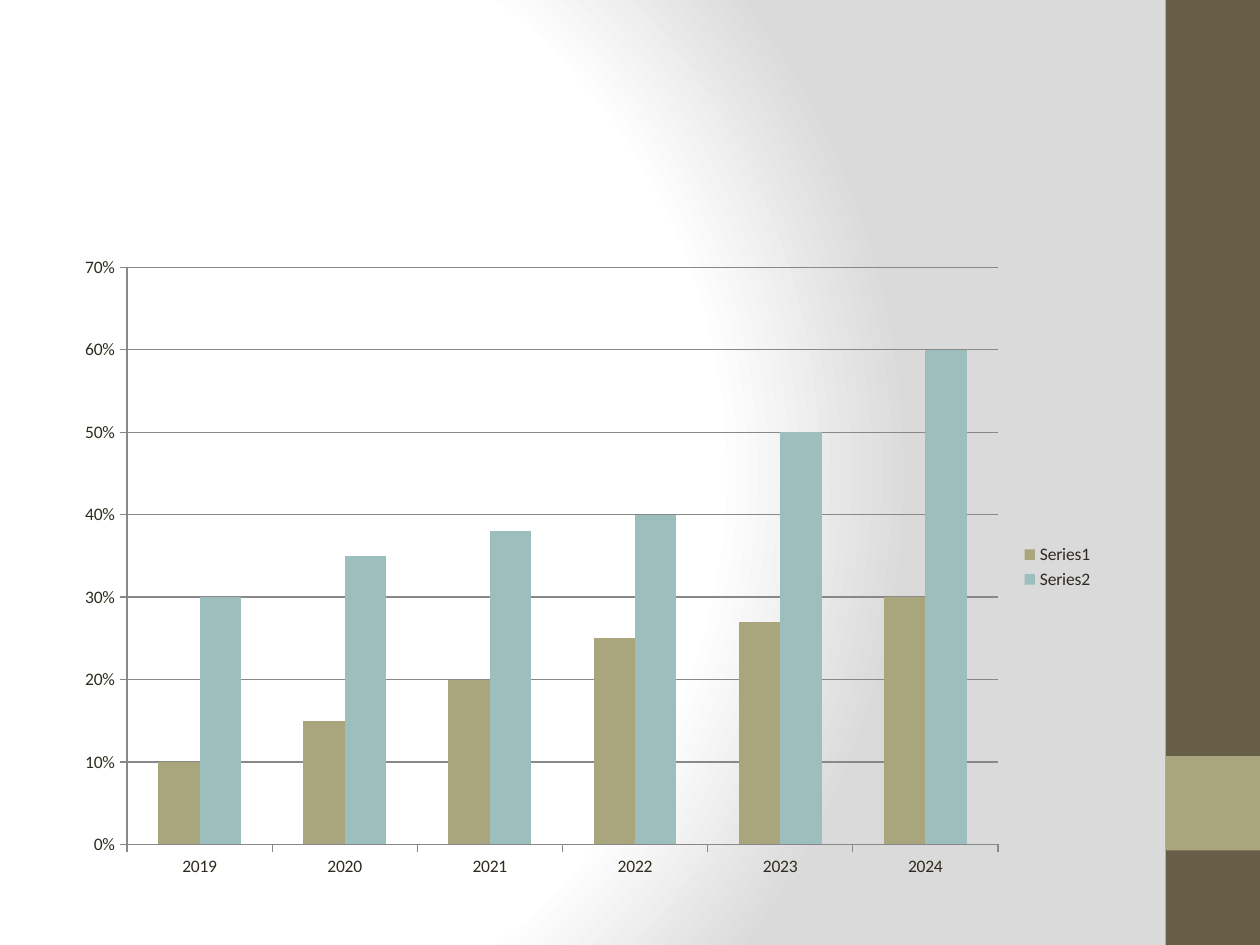
from dataclasses import dataclass

from lxml import etree
from pptx import Presentation
from pptx.chart.data import CategoryChartData
from pptx.dml.color import RGBColor
from pptx.enum.chart import XL_CHART_TYPE, XL_LEGEND_POSITION, XL_TICK_MARK
from pptx.enum.shapes import MSO_SHAPE
from pptx.oxml.ns import qn
from pptx.util import Inches, Pt

RECTANGLE = MSO_SHAPE.RECTANGLE
CLUSTERED = XL_CHART_TYPE.COLUMN_CLUSTERED
LEGEND_RIGHT = XL_LEGEND_POSITION.RIGHT
TICK_OUTSIDE, TICK_NONE = XL_TICK_MARK.OUTSIDE, XL_TICK_MARK.NONE


@dataclass(frozen=True)
class Theme:
    font: str = "Calibri"
    size: int = 10
    text: str = "2F2B20"
    brown: str = "675E47"
    olive: str = "A9A57C"
    teal: str = "9CBEBD"
    axis: str = "888888"
    white: str = "FFFFFF"
    grey: str = "DADADA"


THEME = Theme()

YEARS = ["2019", "2020", "2021", "2022", "2023", "2024"]
SERIES = [
    ("Series1", (0.10, 0.15, 0.20, 0.25, 0.27, 0.30), THEME.olive),
    ("Series2", (0.30, 0.35, 0.38, 0.40, 0.50, 0.60), THEME.teal),
]
CHART_AREA = (0.51, 1.94, 8.27, 5.12)
SIDE_BANDS = [
    ((9.25, 0, 0.75, 7.5), THEME.brown),
    ((9.25, 6, 0.75, 0.75), THEME.olive),
]
GLOW_STOPS = [(0, THEME.white), (75, THEME.white), (100, THEME.grey)]
GLOW_CENTRE = {"l": 20, "t": 50, "r": 100, "b": 50}


def rgb(value):
    return RGBColor.from_string(value)


def thousandths(percent):
    return str(percent * 1000)


def paint_background(page):
    """Fill the page with a circular gradient, which needs direct XML."""
    page.background.fill.gradient()
    gradient = next(page.element.iter(qn("a:gradFill")))
    for child in list(gradient):
        gradient.remove(child)
    stops = etree.SubElement(gradient, qn("a:gsLst"))
    for position, colour in GLOW_STOPS:
        stop = etree.SubElement(stops, qn("a:gs"), pos=thousandths(position))
        etree.SubElement(stop, qn("a:srgbClr"), val=colour)
    circle = etree.SubElement(gradient, qn("a:path"), {"path": "circle"})
    edges = {side: thousandths(part) for side, part in GLOW_CENTRE.items()}
    etree.SubElement(circle, qn("a:fillToRect"), edges)


def add_band(page, area, colour):
    band = page.shapes.add_shape(RECTANGLE, *map(Inches, area))
    band.shadow.inherit = False
    band.fill.solid()
    band.fill.fore_color.rgb = rgb(colour)
    band.line.fill.background()


def style_line(line):
    line.color.rgb = rgb(THEME.axis)
    line.width = Pt(0.75)


def add_growth_chart(page):
    data = CategoryChartData(number_format="0%")
    data.categories = YEARS
    for name, values, _ in SERIES:
        data.add_series(name, values)
    chart = page.shapes.add_chart(CLUSTERED, *map(Inches, CHART_AREA), data).chart

    chart.has_title = False
    chart.font.name = THEME.font
    chart.font.size = Pt(THEME.size)
    chart.font.color.rgb = rgb(THEME.text)
    chart.has_legend = True
    chart.legend.position = LEGEND_RIGHT
    chart.legend.include_in_layout = False

    plot = chart.plots[0]
    plot.vary_by_categories = False
    plot.gap_width = 150
    plot.overlap = 0
    for series, (_, _, colour) in zip(plot.series, SERIES):
        series.format.fill.solid()
        series.format.fill.fore_color.rgb = rgb(colour)

    for axis in (chart.category_axis, chart.value_axis):
        axis.major_tick_mark = TICK_OUTSIDE
        axis.minor_tick_mark = TICK_NONE
        style_line(axis.format.line)
    chart.category_axis.has_major_gridlines = False
    values = chart.value_axis
    values.has_major_gridlines = True
    style_line(values.major_gridlines.format.line)
    values.minimum_scale, values.maximum_scale, values.major_unit = 0, 0.7, 0.1
    values.tick_labels.number_format = "0%"
    values.tick_labels.number_format_is_linked = False


def main():
    deck = Presentation()
    deck.slide_width, deck.slide_height = Inches(10), Inches(7.5)
    page = deck.slides.add_slide(deck.slide_layouts[6])
    paint_background(page)
    for area, colour in SIDE_BANDS:
        add_band(page, area, colour)
    add_growth_chart(page)
    deck.save("out.pptx")


if __name__ == "__main__":
    main()
